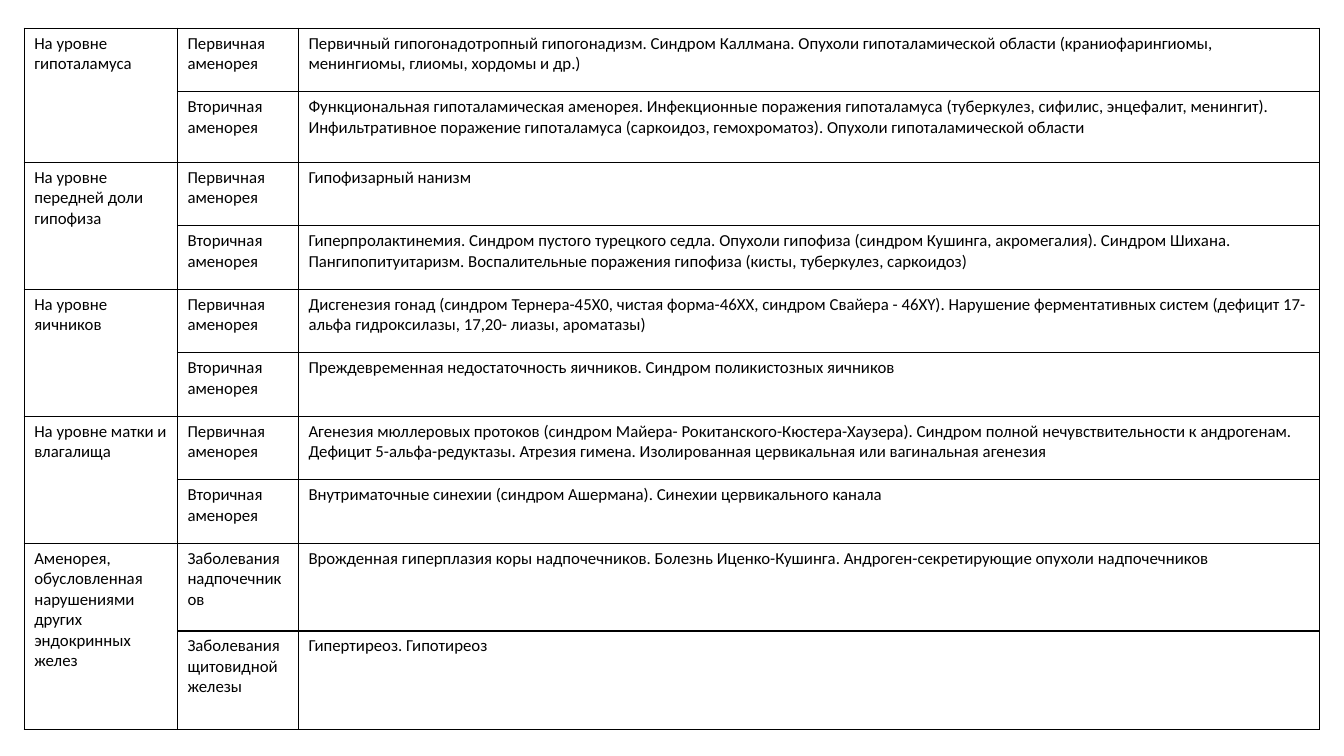
from lxml import etree
from pptx import Presentation
from pptx.dml.color import RGBColor
from pptx.oxml.ns import qn
from pptx.util import Inches, Pt

BLACK = RGBColor(0x00, 0x00, 0x00)
FONT = "Calibri"
COLUMN_WIDTHS = [1.52, 1.2, 10.13]
ROW_HEIGHTS = [0.63, 0.7] + [0.63] * 6 + [0.87, 0.98]
PRIMARY = "Первичная аменорея"
SECONDARY = "Вторичная аменорея"

LEVELS = [
    ("На уровне гипоталамуса", [
        (PRIMARY, "Первичный гипогонадотропный гипогонадизм. Синдром Каллмана. "
                  "Опухоли гипоталамической области (краниофарингиомы, менингиомы, "
                  "глиомы, хордомы и др.)"),
        (SECONDARY, "Функциональная гипоталамическая аменорея. Инфекционные поражения "
                    "гипоталамуса (туберкулез, сифилис, энцефалит, менингит). "
                    "Инфильтративное поражение гипоталамуса (саркоидоз, гемохроматоз). "
                    "Опухоли гипоталамической области"),
    ]),
    ("На уровне передней доли гипофиза", [
        (PRIMARY, "Гипофизарный нанизм"),
        (SECONDARY, "Гиперпролактинемия. Синдром пустого турецкого седла. Опухоли "
                    "гипофиза (синдром Кушинга, акромегалия). Синдром Шихана. "
                    "Пангипопитуитаризм. Воспалительные поражения гипофиза (кисты, "
                    "туберкулез, саркоидоз)"),
    ]),
    ("На уровне яичников", [
        (PRIMARY, "Дисгенезия гонад (синдром Тернера-45X0, чистая форма-46XX, синдром "
                  "Свайера - 46XY). Нарушение ферментативных систем (дефицит 17-альфа "
                  "гидроксилазы, 17,20- лиазы, ароматазы)"),
        (SECONDARY, "Преждевременная недостаточность яичников. Синдром поликистозных "
                    "яичников"),
    ]),
    ("На уровне матки и влагалища", [
        (PRIMARY, "Агенезия мюллеровых протоков (синдром Майера- "
                  "Рокитанского-Кюстера-Хаузера). Синдром полной нечувствительности к "
                  "андрогенам. Дефицит 5-альфа-редуктазы. Атрезия гимена. Изолированная "
                  "цервикальная или вагинальная агенезия"),
        (SECONDARY, "Внутриматочные синехии (синдром Ашермана). Синехии цервикального "
                    "канала"),
    ]),
    ("Аменорея, обусловленная нарушениями других эндокринных желез", [
        ("Заболевания надпочечников",
         "Врожденная гиперплазия коры надпочечников. Болезнь Иценко-Кушинга. "
         "Андроген-секретирующие опухоли надпочечников"),
        ("Заболевания щитовидной железы", "Гипертиреоз. Гипотиреоз"),
    ]),
]


def write_cell(cell, text, size=12, color=BLACK):
    p = cell.text_frame.paragraphs[0]
    r = p.add_run()
    r.text = text
    r.font.name = FONT
    r.font.size = Pt(size)
    r.font.color.rgb = color


def format_cell(cell, color=BLACK, width=1):
    tcPr = cell._tc.get_or_add_tcPr()
    for edge in ("a:lnL", "a:lnR", "a:lnT", "a:lnB"):
        ln = etree.SubElement(tcPr, qn(edge), w=str(Pt(width)))
        fill = etree.SubElement(ln, qn("a:solidFill"))
        etree.SubElement(fill, qn("a:srgbClr"), val=str(color))
    cell.fill.background()


prs = Presentation()
prs.slide_width = Inches(13.33)
prs.slide_height = Inches(7.5)
s = prs.slides.add_slide(prs.slide_layouts[6])

table = s.shapes.add_table(
    len(ROW_HEIGHTS), len(COLUMN_WIDTHS), Inches(0.24), Inches(0.28),
    Inches(sum(COLUMN_WIDTHS)), Inches(sum(ROW_HEIGHTS))).table
table.first_row = False
table.horz_banding = False
for column, width in zip(table.columns, COLUMN_WIDTHS):
    column.width = Inches(width)
for row, height in zip(table.rows, ROW_HEIGHTS):
    row.height = Inches(height)
    for cell in row.cells:
        format_cell(cell)

for i, (level, forms) in enumerate(LEVELS):
    top = i * 2
    table.cell(top, 0).merge(table.cell(top + 1, 0))
    write_cell(table.cell(top, 0), level)
    for j, (form, causes) in enumerate(forms):
        write_cell(table.cell(top + j, 1), form)
        write_cell(table.cell(top + j, 2), causes)

prs.save("out.pptx")
